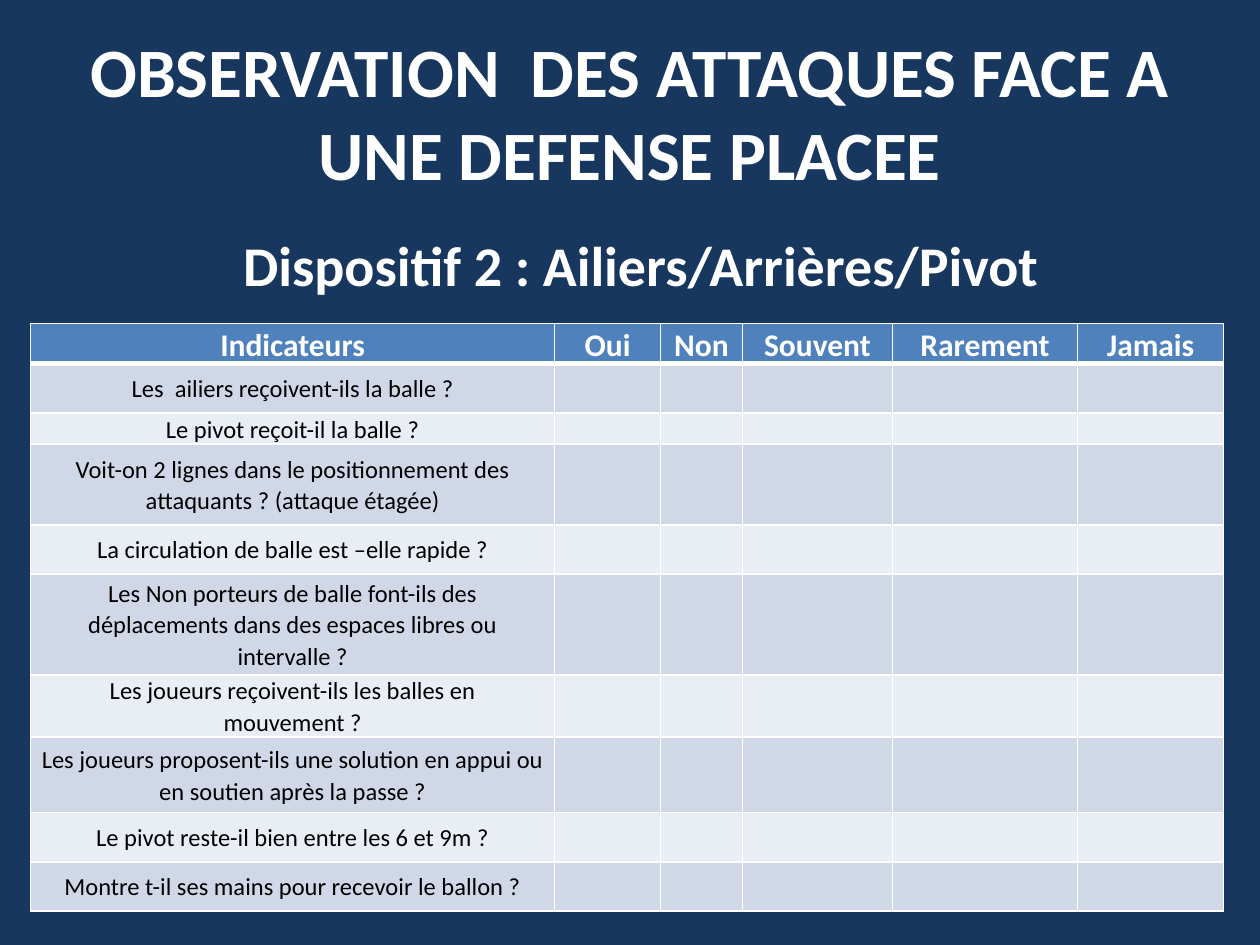
from lxml import etree
from pptx import Presentation
from pptx.dml.color import RGBColor
from pptx.enum.text import MSO_ANCHOR, MSO_AUTO_SIZE, PP_ALIGN
from pptx.oxml.ns import qn
from pptx.util import Pt

LEFT, CENTER = PP_ALIGN.LEFT, PP_ALIGN.CENTER
TOP, MIDDLE = MSO_ANCHOR.TOP, MSO_ANCHOR.MIDDLE
FIT = MSO_AUTO_SIZE.SHAPE_TO_FIT_TEXT

NAVY, BLUE, WHITE, BLACK = "17375E", "4F81BD", "FFFFFF", "000000"
BANDS = ("D0D8E8", "E9EDF4")

HEADS = ["Indicateurs", "Oui", "Non", "Souvent", "Rarement", "Jamais"]
WIDTHS = [299.5, 60.5, 46.8, 85.7, 105.8, 83.5]
HEAD_HIGH = 21.6
# Question and row height
ITEMS = [
    ("Les  ailiers reçoivent-ils la balle ?", 28.1),
    ("Le pivot reçoit-il la balle ?", 16.6),
    ("Voit-on 2 lignes dans le positionnement des attaquants ? (attaque étagée)", 46.1),
    ("La circulation de balle est –elle rapide ?", 28.1),
    ("Les Non porteurs de balle font-ils des déplacements dans des espaces libres ou intervalle ?", 57.6),
    ("Les joueurs reçoivent-ils les balles en mouvement ?", 28.8),
    ("Les joueurs proposent-ils une solution en appui ou en soutien après la passe ?", 43.2),
    ("Le pivot reste-il bien entre les 6 et 9m ?", 28.1),
    ("Montre t-il ses mains pour recevoir le ballon ?", 28.1),
]


def rgb(code):
    return RGBColor.from_string(code)


class Deck:
    font = "Calibri"

    def __init__(self, wide, high):
        self.prs = Presentation()
        self.prs.slide_width, self.prs.slide_height = Pt(wide), Pt(high)

    def page(self, color):
        self.slide = self.prs.slides.add_slide(self.prs.slide_layouts[6])
        fill = self.slide.background.fill
        fill.solid()
        fill.fore_color.rgb = rgb(color)

    def style(self, para, size, color, bold, align):
        para.alignment = align
        font = para.font
        font.name, font.size, font.bold = self.font, Pt(size), bold
        font.color.rgb = rgb(color)

    def text(self, words, box, size, align, anchor, wrap=True):
        frame = self.slide.shapes.add_textbox(*map(Pt, box)).text_frame
        frame.word_wrap = wrap
        frame.vertical_anchor = anchor
        if not wrap:
            frame.auto_size = FIT
        para = frame.paragraphs[0]
        para.text = words
        self.style(para, size, WHITE, True, align)

    def edges(self, cell, lines):
        props = cell._tc.get_or_add_tcPr()
        for side, width in lines.items():
            line = etree.SubElement(props, qn("a:ln" + side), w=str(Pt(width)))
            fill = etree.SubElement(line, qn("a:solidFill"))
            etree.SubElement(fill, qn("a:srgbClr"), val=WHITE)

    def cell(self, cell, words, head, color):
        self.edges(cell, {"L": 1, "R": 1, "T": 1, "B": 3 if head else 1})
        cell.fill.solid()
        cell.fill.fore_color.rgb = rgb(color)
        cell.vertical_anchor = MIDDLE
        cell.margin_left = cell.margin_right = Pt(5)
        cell.margin_top = cell.margin_bottom = 0
        para = cell.text_frame.paragraphs[0]
        para.text = words
        para.line_spacing, para.space_after = 1.06, Pt(8)
        size, ink = (18, WHITE) if head else (14, BLACK)
        self.style(para, size, ink, head, CENTER)

    def table(self, left, top, widths, highs, rows):
        table = self.slide.shapes.add_table(
            len(rows), len(widths), Pt(left), Pt(top),
            Pt(sum(widths)), Pt(sum(highs))).table
        for col, width in zip(table.columns, widths):
            col.width = Pt(width)
        for r, (row, high) in enumerate(zip(rows, highs)):
            table.rows[r].height = Pt(high)
            color = BANDS[(r - 1) % 2] if r else BLUE
            for c, words in enumerate(row):
                self.cell(table.cell(r, c), words, r == 0, color)
        # The first body row shares the thick line below the header
        for cell in table.rows[1].cells:
            cell._tc.tcPr.find(qn("a:lnT")).set("w", str(Pt(3)))


def main():
    deck = Deck(720, 540)
    deck.page(NAVY)

    # Headings
    deck.text("OBSERVATION  DES ATTAQUES FACE A UNE DEFENSE PLACEE",
              (36, 18.7, 648, 90), 39.6, CENTER, MIDDLE)
    deck.text("Dispositif 2 : Ailiers/Arrières/Pivot",
              (131.8, 128.2, 473.8, 46), 32, LEFT, TOP, wrap=False)

    # Observation grid
    blanks = [""] * (len(HEADS) - 1)
    rows = [HEADS] + [[words] + blanks for words, _ in ITEMS]
    highs = [HEAD_HIGH] + [high for _, high in ITEMS]
    deck.table(17.5, 185, WIDTHS, highs, rows)

    deck.prs.save("out.pptx")


if __name__ == "__main__":
    main()
